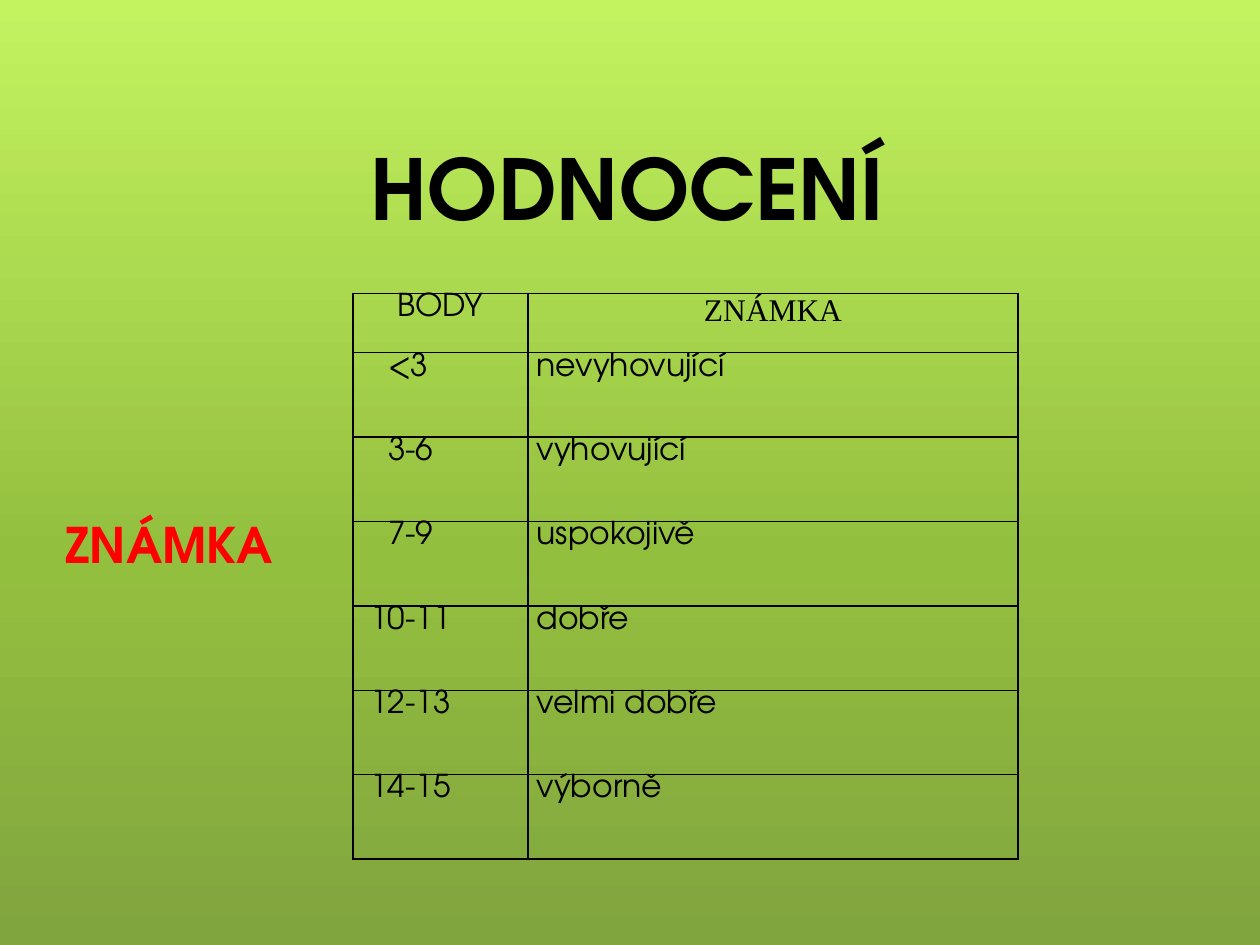
from lxml.etree import SubElement
from pptx import Presentation
from pptx.dml.color import RGBColor
from pptx.enum.text import MSO_ANCHOR as Anchor, PP_ALIGN as Align
from pptx.oxml.ns import qn
from pptx.util import Inches, Pt

TITLE = "HODNOCENÍ"
LABEL = "ZNÁMKA"
HEADERS = ("BODY", "ZNÁMKA")
GRADES = [
    ("<3", "nevyhovující"),
    ("3-6", "vyhovující"),
    ("7-9", "uspokojivě"),
    ("10-11", "dobře"),
    ("12-13", "velmi dobře"),
    ("14-15", "výborně"),
]

THEME = {
    "gradient": [(0, "C3F35F"), (59, "93BF3F"), (100, "81A53E")],
    "border": "000000",
    "border_width": Pt(1),
    "title": {"name": "TeX Gyre Adventor", "size": Pt(48), "bold": True, "color": "000000"},
    "label": {"name": "TeX Gyre Adventor", "size": Pt(28), "bold": True, "color": "FF0000"},
    "cell": {"name": "TeX Gyre Adventor", "size": Pt(18), "bold": False, "color": "000000"},
    "serif": {"name": "Times New Roman", "size": Pt(18), "bold": False, "color": "000000"},
}

TITLE_BOX = (1.14, 0.68, 7.68, 1.25)
LABEL_BOX = (0.52, 4.08, 2.2, 0.5)
TABLE_BOX = (2.8, 2.33, 5.28, 4.5)
COLUMN_WIDTHS = (1.39, 3.89)
HEADER_HEIGHT, ROW_HEIGHT = 0.47, 0.67
SHORT_INDENT, LONG_INDENT = 0.07, 0.21
CELL_MARGINS = {"margin_left": Inches(0.07), "margin_right": Inches(0.07),
                "margin_top": 0, "margin_bottom": 0}
NO_MARGINS = dict.fromkeys(CELL_MARGINS, 0)


def set_all(target, values):
    for name, value in values.items():
        setattr(target, name, value)


def write(frame, text, style, align, indent=0):
    paragraph = frame.paragraphs[0]
    paragraph.alignment = align
    if indent:
        paragraph._p.get_or_add_pPr().set("marL", str(Inches(indent)))
    run = paragraph.add_run()
    run.text = text
    values = dict(THEME[style])
    run.font.color.rgb = RGBColor.from_string(values.pop("color"))
    set_all(run.font, values)


def paint_background(slide):
    fill = slide.background.fill
    fill.gradient()
    fill.gradient_angle = 270
    stops = slide.element.find(".//" + qn("a:gsLst"))
    for stop in list(stops):
        stops.remove(stop)
    for position, color in THEME["gradient"]:
        stop = SubElement(stops, qn("a:gs"), pos=str(position * 1000))
        SubElement(stop, qn("a:srgbClr"), val=color)


def add_borders(cell):
    properties = cell._tc.get_or_add_tcPr()
    for index, side in enumerate(("a:lnL", "a:lnR", "a:lnT", "a:lnB")):
        line = SubElement(properties, qn(side), w=str(THEME["border_width"]))
        fill = SubElement(line, qn("a:solidFill"))
        SubElement(fill, qn("a:srgbClr"), val=THEME["border"])
        properties.remove(line)
        properties.insert(index, line)


def add_grades(slide):
    rows = [HEADERS] + GRADES
    table = slide.shapes.add_table(
        len(rows), len(HEADERS), *map(Inches, TABLE_BOX)).table
    set_all(table, {"first_row": False, "horz_banding": False})
    for column, width in zip(table.columns, COLUMN_WIDTHS):
        column.width = Inches(width)
    for row_index, values in enumerate(rows):
        is_header = row_index == 0
        table.rows[row_index].height = Inches(HEADER_HEIGHT if is_header else ROW_HEIGHT)
        for column_index, text in enumerate(values):
            cell = table.cell(row_index, column_index)
            set_all(cell, CELL_MARGINS)
            cell.fill.background()
            add_borders(cell)
            indent = 0
            if column_index == 0 and not is_header:
                indent = SHORT_INDENT if len(text) > 3 else LONG_INDENT
            style = "serif" if is_header and column_index == 1 else "cell"
            align = Align.CENTER if is_header else Align.LEFT
            write(cell.text_frame, text, style, align, indent)


def main():
    presentation = Presentation()
    set_all(presentation, {"slide_width": Inches(10), "slide_height": Inches(7.5)})
    slide = presentation.slides.add_slide(presentation.slide_layouts[5])
    paint_background(slide)

    title = slide.shapes.title
    set_all(title, dict(zip(("left", "top", "width", "height"), map(Inches, TITLE_BOX))))
    set_all(title.text_frame, {"vertical_anchor": Anchor.BOTTOM, "word_wrap": True})
    write(title.text_frame, TITLE, "title", Align.CENTER)

    label = slide.shapes.add_textbox(*map(Inches, LABEL_BOX))
    set_all(label.text_frame, {"word_wrap": True, **NO_MARGINS})
    write(label.text_frame, LABEL, "label", Align.LEFT)

    add_grades(slide)
    presentation.save("out.pptx")


if __name__ == "__main__":
    main()
